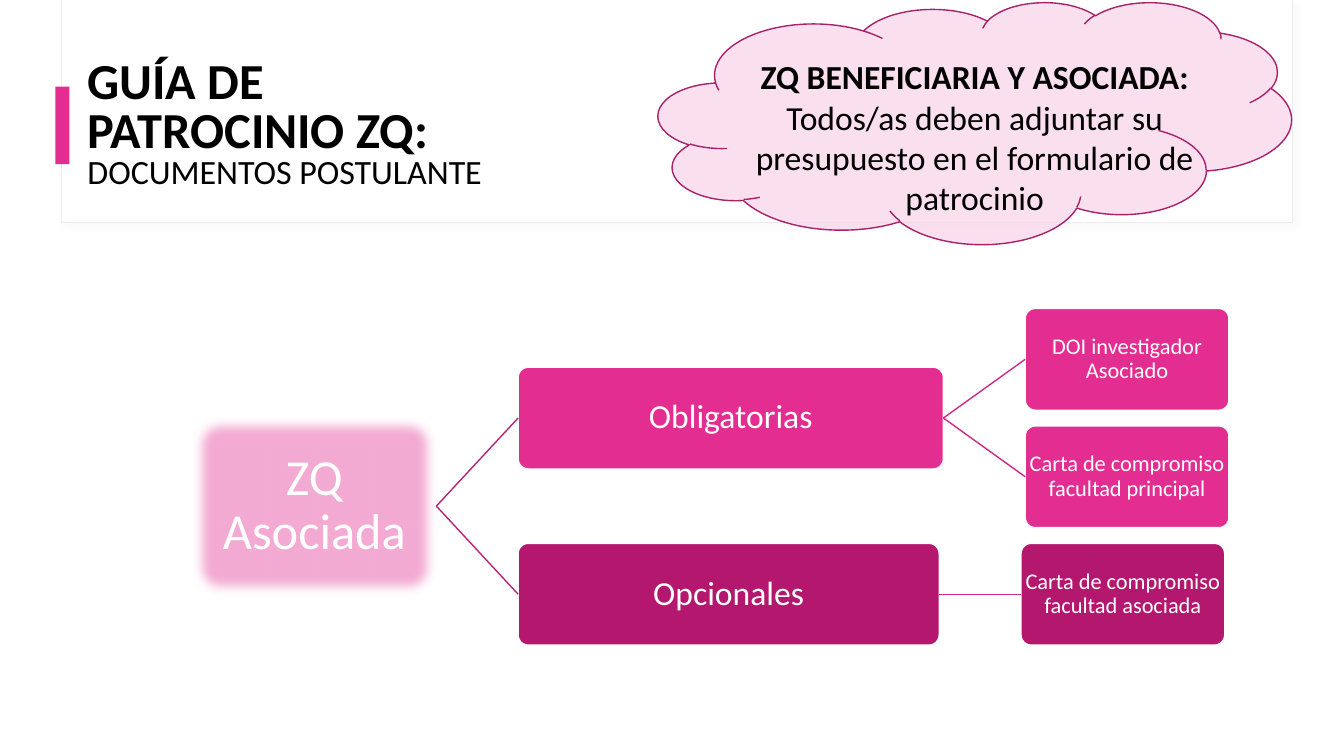
from dataclasses import dataclass

from lxml import etree
from pptx import Presentation
from pptx.dml.color import RGBColor
from pptx.enum.shapes import MSO_CONNECTOR, MSO_SHAPE
from pptx.enum.text import MSO_ANCHOR, PP_ALIGN
from pptx.oxml.ns import qn
from pptx.util import Pt

RECTANGLE = MSO_SHAPE.RECTANGLE
ROUNDED = MSO_SHAPE.ROUNDED_RECTANGLE
CLOUD = MSO_SHAPE.CLOUD
STRAIGHT = MSO_CONNECTOR.STRAIGHT
TOP, MIDDLE = MSO_ANCHOR.TOP, MSO_ANCHOR.MIDDLE
LEFT, CENTER = PP_ALIGN.LEFT, PP_ALIGN.CENTER
LEFT_SIDE, RIGHT_SIDE = 1, 3

FONT = "Calibri"
BLACK, WHITE = "000000", "FFFFFF"
PINK, PALE_PINK, DARK_PINK = "E32D91", "F4ABD3", "B4186E"
ROOT_LINK, LEAF_LINK = "B62474", "CE2984"

FIRST_ROW, ROW_STEP, ROW_HEIGHT = 220.3, 83.9, 72.7
ROOT_LEFT, COLUMN_GAP = 137.5, 58.4


@dataclass(frozen=True)
class Span:
    text: str
    size: float
    color: str = WHITE
    bold: bool = False


@dataclass(frozen=True)
class Node:
    label: str
    row: float
    width: float
    height: float
    size: float
    inset: float
    fill: str
    link: str = LEAF_LINK
    children: tuple["Node", ...] = ()


def rgb(color: str) -> RGBColor:
    return RGBColor.from_string(color)


def add_effect(shape, kind: str, **settings: str):
    effects = shape._element.spPr.get_or_add_effectLst()
    return etree.SubElement(effects, qn(f"a:{kind}"), settings)


def add_alpha(color_element, percent: int) -> None:
    etree.SubElement(color_element, qn("a:alpha"), val=str(percent * 1000))


def add_box(page, preset, left: float, top: float, width: float, height: float,
            fill: str, line: str | None = None, line_width: float = 1):
    box = page.shapes.add_shape(preset, Pt(left), Pt(top), Pt(width), Pt(height))
    box.shadow.inherit = False
    box.fill.solid()
    box.fill.fore_color.rgb = rgb(fill)
    if line:
        box.line.color.rgb = rgb(line)
        box.line.width = Pt(line_width)
    else:
        box.line.fill.background()
    return box


def write(box, spans: list[Span], align, anchor, spacing: float = 1) -> None:
    frame = box.text_frame
    frame.word_wrap = True
    frame.vertical_anchor = anchor
    para = frame.paragraphs[0]
    para.alignment = align
    para.line_spacing = spacing
    for span in spans:
        run = para.add_run()
        run.text = span.text
        run.font.name = FONT
        run.font.size = Pt(span.size)
        run.font.bold = span.bold
        run.font.color.rgb = rgb(span.color)


def add_text(page, left: float, top: float, width: float, height: float,
             spans: list[Span], align, anchor, spacing: float = 1) -> None:
    box = page.shapes.add_textbox(Pt(left), Pt(top), Pt(width), Pt(height))
    write(box, spans, align, anchor, spacing)


def add_link(page, parent, child, color: str) -> None:
    link = page.shapes.add_connector(STRAIGHT, 0, 0, 0, 0)
    link.begin_connect(parent, RIGHT_SIDE)
    link.end_connect(child, LEFT_SIDE)
    link.line.color.rgb = rgb(color)
    link.line.width = Pt(1)
    etree.SubElement(link._element.spPr, qn("a:effectLst"))


def add_node(page, node: Node, left: float):
    middle = FIRST_ROW + node.row * ROW_STEP + ROW_HEIGHT / 2
    box = add_box(page, ROUNDED, left, middle - node.height / 2,
                  node.width, node.height, node.fill, WHITE)
    box.adjustments[0] = 0.1
    frame = box.text_frame
    frame.margin_left = frame.margin_right = Pt(node.inset)
    frame.margin_top = frame.margin_bottom = Pt(node.inset)
    write(box, [Span(node.label, node.size)], CENTER, MIDDLE, 0.9)
    for child in node.children:
        child_box = add_node(page, child, left + node.width + COLUMN_GAP)
        add_link(page, box, child_box, node.link)
    return box


def branch(label: str, row: float, width: float, fill: str, *children: Node) -> Node:
    return Node(label, row, width, ROW_HEIGHT, 24, 1.4, fill, children=children)


def leaf(label: str, row: float, fill: str) -> Node:
    return Node(label, row, 145.5, ROW_HEIGHT, 16, 0.5, fill)


def add_header(page) -> None:
    panel = add_box(page, RECTANGLE, 43.9, 0, 879.1, 159.1, WHITE, "ECECEE", 0.75)
    shadow = add_effect(panel, "outerShdw", blurRad=str(Pt(4)), dist=str(Pt(3)),
                        dir="2700000", algn="tl", rotWithShape="0")
    add_alpha(etree.SubElement(shadow, qn("a:srgbClr"), val="D9D9D9"), 15)
    add_box(page, RECTANGLE, 44.6, 0, 878.4, 158.4, WHITE)
    add_box(page, RECTANGLE, 39.6, 61.9, 10.1, 55.4, PINK)


def add_notice(page) -> None:
    cloud = add_box(page, CLOUD, 470.2, 1.4, 452.2, 172.8, "F9D5E9", "A8216B")
    add_alpha(cloud._element.spPr.find(qn("a:solidFill"))[0], 75)
    add_text(page, 518.4, 36.7, 355.7, 123.8, [
        Span("ZQ BENEFICIARIA Y ASOCIADA: ", 24, BLACK, True),
        Span("Todos/as deben adjuntar su presupuesto en el formulario de patrocinio",
             24, BLACK),
    ], CENTER, TOP)


def main() -> None:
    deck = Presentation()
    deck.slide_width, deck.slide_height = Pt(960), Pt(540)
    page = deck.slides.add_slide(deck.slide_layouts[6])

    add_header(page)
    required = branch("Obligatorias", 0.5, 303.8, PINK,
                      leaf("DOI investigador Asociado", 0, PINK),
                      leaf("Carta de compromiso facultad principal", 1, PINK))
    optional = branch("Opcionales", 2, 300.8, DARK_PINK,
                      leaf("Carta de compromiso facultad asociada", 2, DARK_PINK))
    root = Node("ZQ Asociada", 1.25, 174.2, 128.2, 36, 2, PALE_PINK, ROOT_LINK,
                (required, optional))
    root_box = add_node(page, root, ROOT_LEFT)
    add_effect(root_box, "softEdge", rad=str(Pt(8)))

    add_notice(page)
    add_text(page, 55.4, 26.6, 318.2, 126.7, [
        Span("GUÍA DE PATROCINIO ZQ: ", 36, BLACK, True),
        Span("DOCUMENTOS POSTULANTE", 24.3, BLACK),
    ], LEFT, MIDDLE, 0.8)
    deck.save("out.pptx")


if __name__ == "__main__":
    main()
